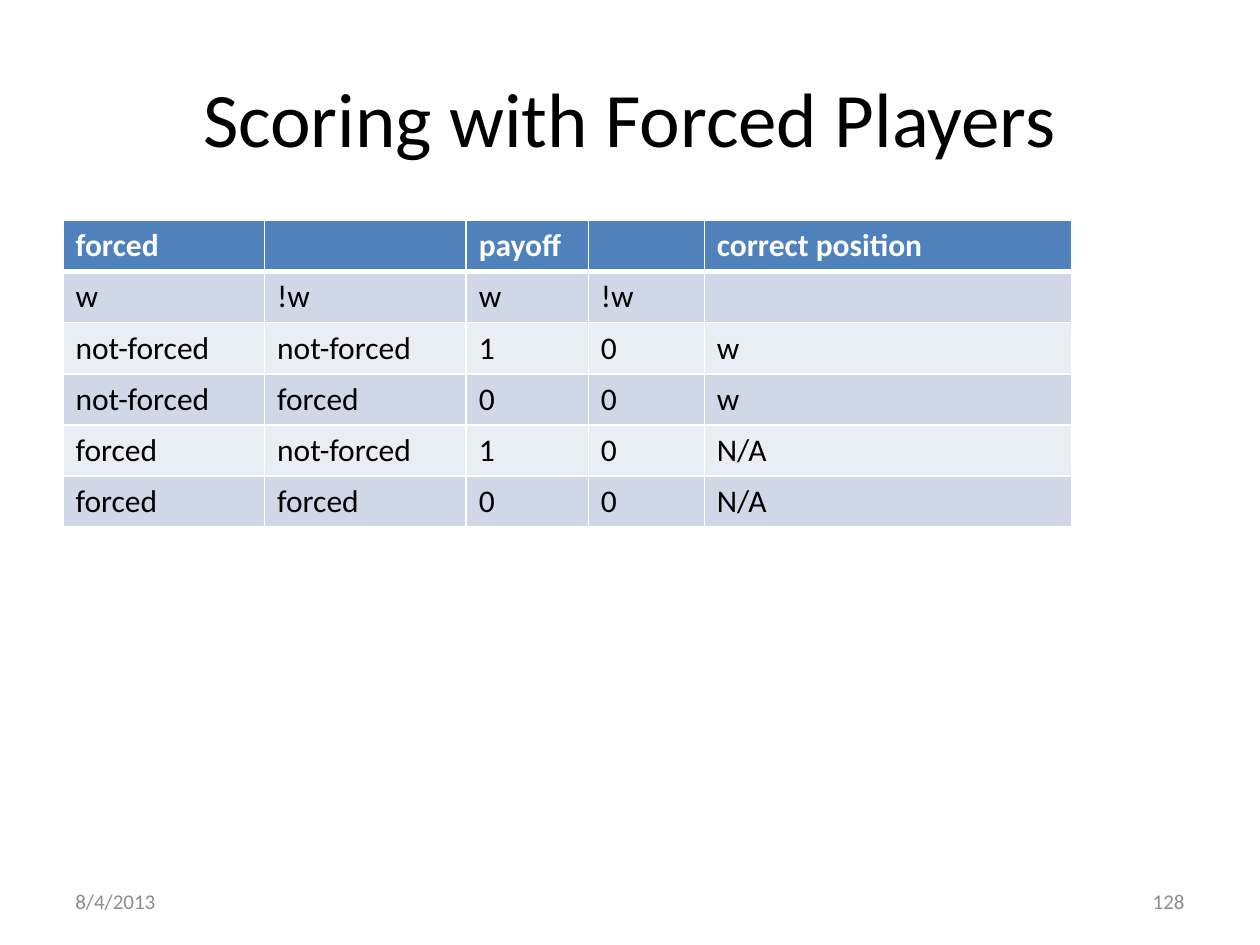
import lxml.etree
import pptx
import pptx.dml.color
import pptx.enum.text
import pptx.oxml.ns
import pptx.util

COLORS = {
    "ink": "000000",
    "paper": "FFFFFF",
    "header": "4F81BD",
    "band": "D0D8E8",
    "light": "E9EDF4",
    "footer": "8C8C8C",
}
FONT = "Calibri"
ALIGN = pptx.enum.text.PP_ALIGN
MIDDLE = pptx.enum.text.MSO_ANCHOR.MIDDLE
WIDTH, HEIGHT = pptx.util.Inches(10), pptx.util.Inches(7.5)
COLUMNS = [1.6, 1.6, 0.97, 0.92, 2.92]
ROWS = [
    ["forced", "", "payoff", "", "correct position"],
    ["w", "!w", "w", "!w", ""],
    ["not-forced", "not-forced", "1", "0", "w"],
    ["not-forced", "forced", "0", "0", "w"],
    ["forced", "not-forced", "1", "0", "N/A"],
    ["forced", "forced", "0", "0", "N/A"],
]


def make_box(left, top, width, height):
    """Turn inches into a left, top, width, height box."""
    return [pptx.util.Inches(length) for length in (left, top, width, height)]


def write_text(frame, text, size=18, color="ink", bold=False, align=ALIGN.LEFT):
    """Write one formatted paragraph into a text frame."""
    para = frame.paragraphs[0]
    para.alignment = align
    span = para.add_run()
    span.text = text
    span.font.name = FONT
    span.font.size = pptx.util.Pt(size)
    span.font.bold = bold
    span.font.color.rgb = pptx.dml.color.RGBColor.from_string(COLORS[color])


def add_title(page, box, text):
    """Place the title placeholder in its box and fill it."""
    title = page.shapes.title
    title.left, title.top, title.width, title.height = box
    title.text_frame.vertical_anchor = MIDDLE
    write_text(title.text_frame, text, size=44, align=ALIGN.CENTER)


def add_borders(cell, widths):
    """Draw white borders of the given widths in points by side."""
    properties = cell._tc.get_or_add_tcPr()
    for place, (side, width) in enumerate(widths.items()):
        line = lxml.etree.Element(
            pptx.oxml.ns.qn(f"a:ln{side}"), w=str(pptx.util.Pt(width))
        )
        fill = lxml.etree.SubElement(line, pptx.oxml.ns.qn("a:solidFill"))
        lxml.etree.SubElement(
            fill, pptx.oxml.ns.qn("a:srgbClr"), val=COLORS["paper"]
        )
        properties.insert(place, line)


def add_scores(page, box):
    """Build the banded table of payoffs inside its box."""
    table = page.shapes.add_table(len(ROWS), len(COLUMNS), *box).table
    for column, width in zip(table.columns, COLUMNS):
        column.width = pptx.util.Inches(width)
    for row, texts in enumerate(ROWS):
        head = row == 0
        shade = "header" if head else ("light", "band")[row % 2]
        for column, text in enumerate(texts):
            cell = table.cell(row, column)
            cell.fill.solid()
            cell.fill.fore_color.rgb = pptx.dml.color.RGBColor.from_string(
                COLORS[shade]
            )
            add_borders(
                cell,
                {"L": 1, "R": 1, "T": 3 if row == 1 else 1, "B": 3 if head else 1},
            )
            if text:
                write_text(
                    cell.text_frame, text, color="paper" if head else "ink", bold=head
                )


def add_footer(page, box, date, number):
    """Set the date and the page number at the two ends of the box."""
    left, top, width, height = box
    part = int(width * 0.26)
    ends = [(left, date, ALIGN.LEFT), (left + width - part, number, ALIGN.RIGHT)]
    for start, text, align in ends:
        frame = page.shapes.add_textbox(start, top, part, height).text_frame
        frame.word_wrap = True
        frame.vertical_anchor = MIDDLE
        write_text(frame, text, size=12, color="footer", align=align)


def main():
    """Build and save the deck."""
    deck = pptx.Presentation()
    deck.slide_width, deck.slide_height = WIDTH, HEIGHT
    page = deck.slides.add_slide(deck.slide_layouts[5])
    add_title(page, make_box(0.5, 0.3, 9, 1.25), "Scoring with Forced Players")
    add_scores(page, make_box(0.5, 1.75, 8, 2.43))
    add_footer(page, make_box(0.5, 6.95, 9, 0.4), "8/4/2013", "128")
    deck.save("out.pptx")


if __name__ == "__main__":
    main()
